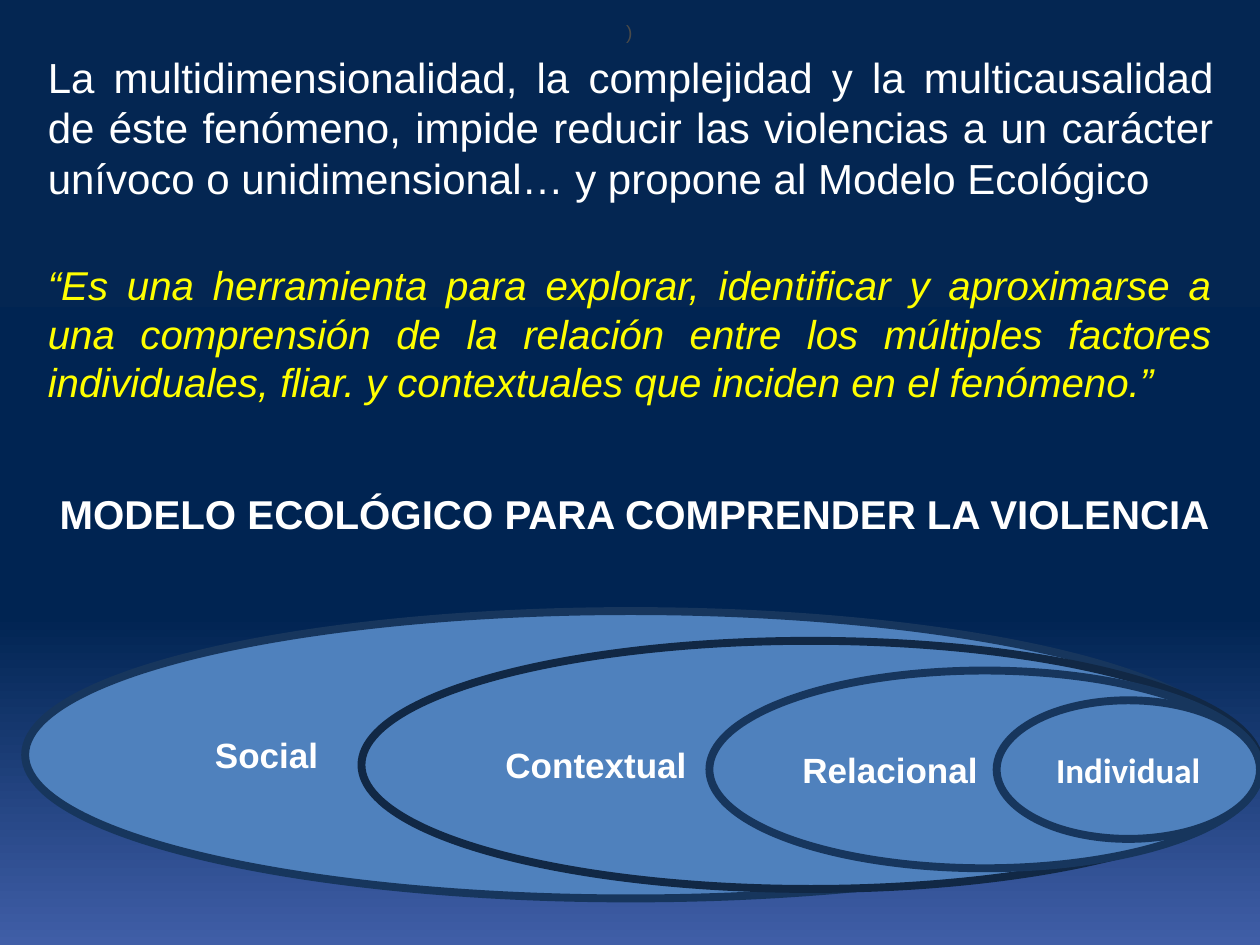
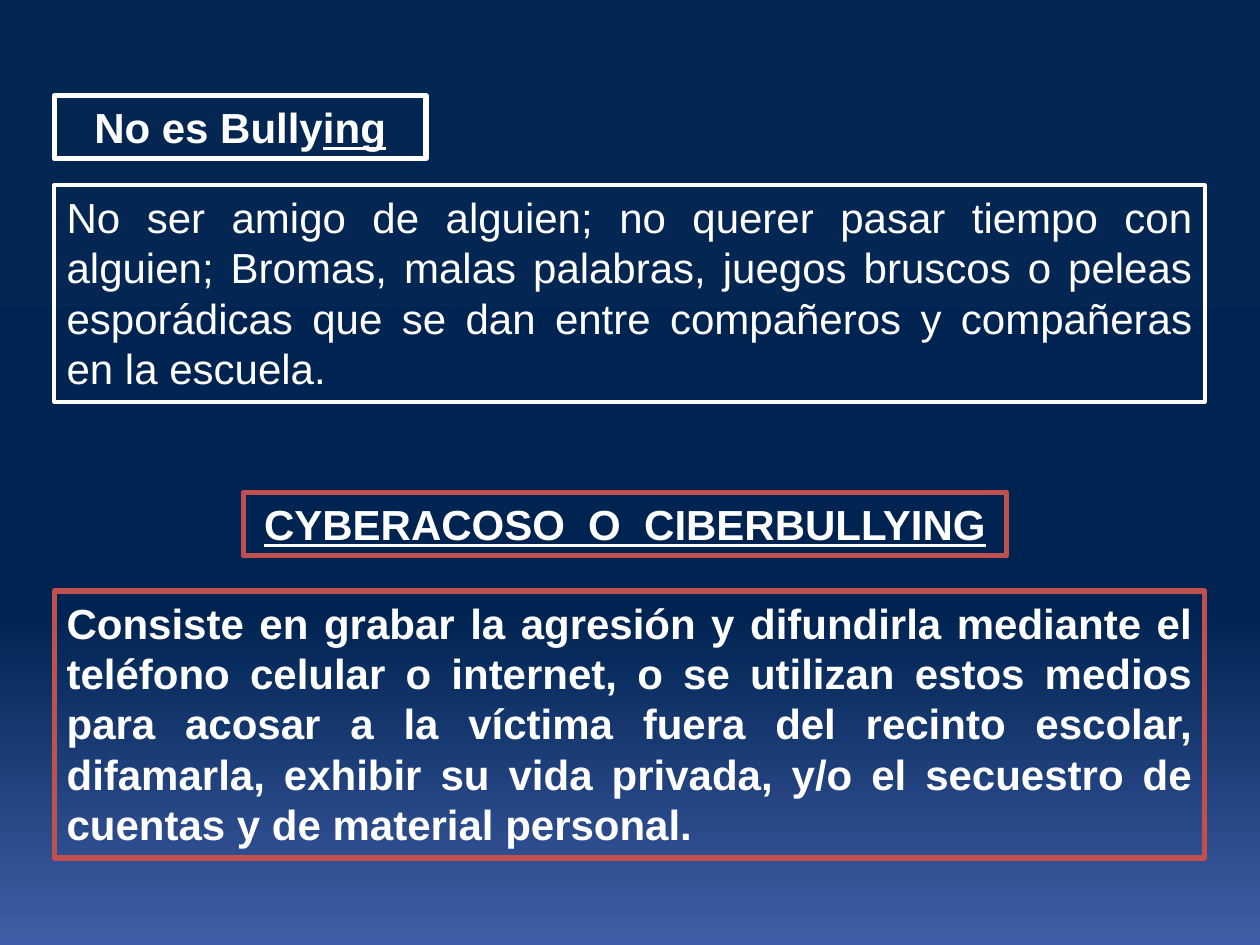
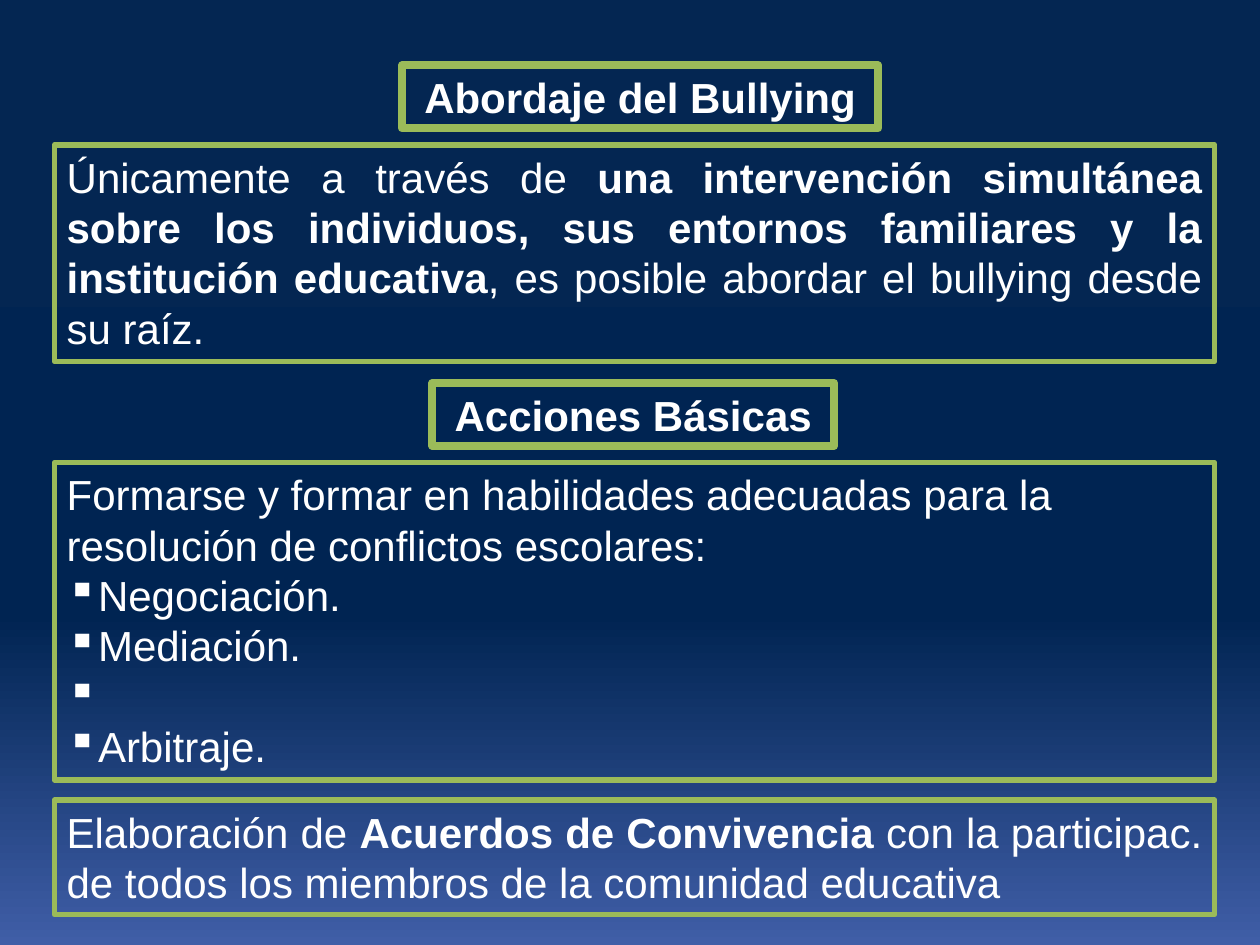
from collections import namedtuple
from copy import deepcopy

from lxml import etree
from pptx import Presentation
from pptx.dml.color import RGBColor
from pptx.enum.shapes import MSO_SHAPE
from pptx.enum.text import MSO_ANCHOR, MSO_AUTO_SIZE, PP_ALIGN
from pptx.oxml.ns import qn
from pptx.util import Pt

RECT, OVAL = MSO_SHAPE.RECTANGLE, MSO_SHAPE.OVAL
LEFT, MID, JUST = PP_ALIGN.LEFT, PP_ALIGN.CENTER, PP_ALIGN.JUSTIFY
TOP, HALF = MSO_ANCHOR.TOP, MSO_ANCHOR.MIDDLE
GROW = MSO_AUTO_SIZE.SHAPE_TO_FIT_TEXT

INK = {
    "white": "FFFFFF", "yellow": "FFFF00", "gray": "4A4A49",
    "blue": "4F81BD", "navy": "17365D", "dark": "112845",
    "red": "C0504D", "green": "9BBB59",
}
SKY = [(0, "042652"), (0.65, "002452"), (1, "405EA7")]
EDGE = 31
HEAD = 36
HANG = 15.4

Box = namedtuple("Box", "x y w h")


def tint(name):
    return RGBColor.from_string(INK[name])


def paint_sky(master):
    """Give every slide the shared vertical gradient."""
    fill = master.background.fill
    fill.gradient()
    fill.gradient_angle = 270
    stops = next(master.element.iter(qn("a:gsLst")))
    stops.append(deepcopy(stops[-1]))
    for stop, (place, color) in zip(fill.gradient_stops, SKY):
        stop.position = place
        stop.color.rgb = RGBColor.from_string(color)


def style(par, size=24, color="white", face="Arial", bold=False,
          slant=False, under=False, align=JUST):
    par.alignment = align
    font = par.font
    font.name, font.size = face, Pt(size)
    font.color.rgb = tint(color)
    font.bold, font.italic, font.underline = bold, slant, under


def fill_par(par, text, **look):
    """Write a string, or a list of (text, mark) runs marked b or u."""
    style(par, **look)
    for part, mark in [(text, "")] if isinstance(text, str) else text:
        run = par.add_run()
        run.text = part
        if mark == "b":
            run.font.bold = True
        elif mark == "u":
            run.font.underline = True


def add_dot(par):
    props = par._p.get_or_add_pPr()
    props.set("marL", str(Pt(HANG)))
    props.set("indent", str(-Pt(HANG)))
    dot = etree.Element(qn("a:buChar"), char="▪")
    props.insert_element_before(dot, "a:tabLst", "a:defRPr", "a:extLst")


def add_note(slide, box, text, wrap=True, anchor=TOP, **look):
    note = slide.shapes.add_textbox(*map(Pt, box))
    frame = note.text_frame
    frame.word_wrap = wrap
    frame.auto_size = GROW
    frame.vertical_anchor = anchor
    fill_par(frame.paragraphs[0], text, **look)


def add_form(slide, kind, box, edge, width, fill=None):
    form = slide.shapes.add_shape(kind, *map(Pt, box))
    form.shadow.inherit = False
    if fill:
        form.fill.solid()
        form.fill.fore_color.rgb = tint(fill)
    else:
        form.fill.background()
    form.line.color.rgb = tint(edge)
    form.line.width = Pt(width)
    form.text_frame.word_wrap = True
    return form


def add_panel(slide, box, text, edge, width=3, dots=(), **look):
    frame = add_form(slide, RECT, box, edge, width).text_frame
    frame.auto_size = GROW
    frame.vertical_anchor = TOP
    fill_par(frame.paragraphs[0], text, **look)
    for dot in dots:
        par = frame.add_paragraph()
        fill_par(par, dot, **look)
        add_dot(par)


def add_pair(slide, box, head, text, edge, shift, wide, drop,
             thick=3, thin=3, under=False, **look):
    """Place a short framed heading above a framed body."""
    add_panel(slide, Box(box.x + shift, box.y, wide, HEAD), head, edge,
              thick, bold=True, under=under, align=MID)
    body = Box(box.x, box.y + drop, box.w, box.h - drop)
    add_panel(slide, body, text, edge, thin, **look)


def add_rings(slide, box):
    """Nest four ovals toward the right edge of the box."""
    step = 17
    rings = [
        ("Social", 0, 692, 164.2, "navy", "Arial", LEFT),
        ("Contextual", 192.2, 513.4, 141.8, "dark", "Arial", LEFT),
        ("Relacional", 391, 314.6, 113, "navy", "Arial", LEFT),
        ("Individual", 555.1, 150.5, 79.2, "navy", "Calibri", MID),
    ]
    for rank, (name, shift, wide, high, edge, face, align) in enumerate(rings):
        ring = Box(box.x + shift, box.y + rank * step, wide, high)
        frame = add_form(slide, OVAL, ring, edge, 4.5, "blue").text_frame
        frame.vertical_anchor = HALF
        fill_par(frame.paragraphs[0], name, size=20, face=face,
                 bold=True, align=align)


def build_model(slide, box):
    x, y, w, _ = box
    add_note(slide, Box(x, y, w, 94.3),
             "La multidimensionalidad, la complejidad y la multicausalidad de "
             "éste fenómeno, impide reducir las violencias a un carácter "
             "unívoco o unidimensional… y propone al Modelo Ecológico")
    add_note(slide, Box(x + 330.5, y - 18, 18, 20.9), ")", wrap=False,
             anchor=HALF, size=11, color="gray")
    add_note(slide, Box(x, y + 119.5, w, 90.7),
             "“Es una herramienta para explorar, identificar y aproximarse a "
             "una comprensión de la relación entre los múltiples factores "
             "individuales, fliar. y contextuales que inciden en el fenómeno.”",
             size=23, color="yellow", slant=True)
    add_note(slide, Box(x, y + 249.9, w + 5.8, 35.3),
             "MODELO ECOLÓGICO PARA COMPRENDER LA VIOLENCIA",
             size=23, bold=True, align=MID)
    add_rings(slide, Box(x - 5.8, y + 323.3, 705.6, 164.2))


def build_cyber(slide, box):
    x, y, w, _ = box
    add_pair(slide, Box(x, y, w, 174.9),
             [("No es Bully", ""), ("ing", "u")],
             "No ser amigo de alguien; no querer pasar tiempo con alguien; "
             "Bromas, malas palabras, juegos bruscos o peleas esporádicas que "
             "se dan entre compañeros y compañeras en la escuela.",
             "white", shift=0, wide=212.4, drop=51.1, thin=2.25)
    add_pair(slide, Box(x, y + 226.8, w, 208.8),
             "CYBERACOSO  O  CIBERBULLYING",
             "Consiste en grabar la agresión y difundirla mediante el teléfono "
             "celular o internet, o se utilizan estos medios para acosar a la "
             "víctima fuera del recinto escolar, difamarla, exhibir su vida "
             "privada, y/o el secuestro de cuentas y de material personal.",
             "red", shift=108, wide=436.3, drop=56.2, under=True, bold=True)


def build_steps(slide, box):
    x, y, w, _ = box
    rule = {"edge": "green", "drop": 45.4, "thick": 4.5}
    add_pair(slide, Box(x, y, w, 169.2), "Abordaje del Bullying",
             [("Únicamente a través de", ""),
              (" una intervención simultánea sobre los individuos, sus "
               "entornos familiares y la institución educativa", "b"),
              (", es posible abordar el bullying desde su raíz.", "")],
             shift=198.7, wide=272.2, **rule)
    add_pair(slide, Box(x, y + 181.5, w, 226.8), "Acciones Básicas",
             "Formarse y formar en habilidades adecuadas para la resolución "
             "de conflictos escolares:",
             shift=216, wide=229.7, align=LEFT,
             dots=["Negociación.", "Mediación.", " ", "Arbitraje."], **rule)
    add_panel(slide, Box(x, y + 419.8, w, 65.5),
              [("Elaboración de ", ""), ("Acuerdos de Convivencia ", "b"),
               ("con la participac. de todos los miembros de la comunidad "
                "educativa", "")], "green")


def main():
    deck = Presentation()
    deck.slide_width, deck.slide_height = Pt(720), Pt(540)
    paint_sky(deck.slide_master)
    pages = [
        (build_model, Box(20.2, 25.9, 680.4, 487.5)),
        (build_cyber, Box(EDGE, 54.7, 657.4, 435.6)),
        (build_steps, Box(EDGE, 37.4, 663.1, 485.3)),
    ]
    for build, box in pages:
        build(deck.slides.add_slide(deck.slide_layouts[6]), box)
    deck.save("out.pptx")


if __name__ == "__main__":
    main()
